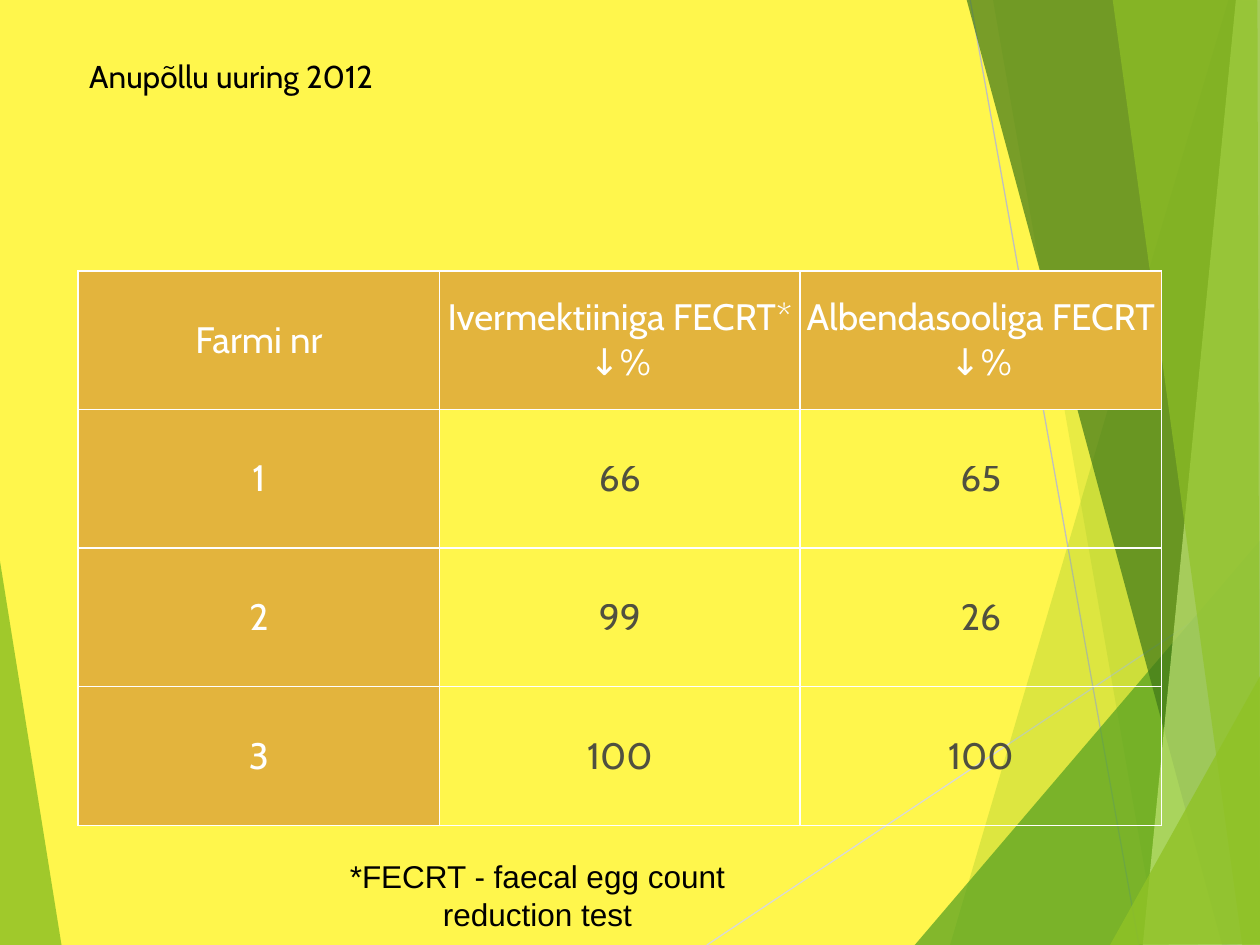
from dataclasses import dataclass
from lxml import etree
from pptx import Presentation
from pptx.dml.color import RGBColor
from pptx.enum.shapes import MSO_CONNECTOR
from pptx.enum.text import MSO_ANCHOR, PP_ALIGN
from pptx.oxml.ns import qn
from pptx.util import Inches, Pt

LINE = MSO_CONNECTOR.STRAIGHT
TOP, MIDDLE = MSO_ANCHOR.TOP, MSO_ANCHOR.MIDDLE
LEFT, CENTER = PP_ALIGN.LEFT, PP_ALIGN.CENTER
YELLOW = RGBColor(0xFF, 0xF6, 0x4C)
LIME = RGBColor(0x90, 0xC2, 0x26)
GREEN = RGBColor(0x54, 0xA0, 0x21)
DARK = RGBColor(0x3F, 0x78, 0x19)
PALE = RGBColor(0xC0, 0xE4, 0x74)
GOLD = RGBColor(0xE3, 0xB4, 0x3D)
INK = RGBColor(0x3D, 0x3E, 0x3F)
BLACK = RGBColor(0, 0, 0)
WHITE = RGBColor(0xFF, 0xFF, 0xFF)
SILVER = RGBColor(0xD9, 0xD9, 0xD9)
GRAY = RGBColor(0xBF, 0xBF, 0xBF)

SHARDS = [
    ([(9.75, 0), (7.54, 7.5), (10.02, 7.51), (10.01, 0.01)], LIME, 30),
    ([(7.88, -0.01), (9.19, 7.5), (10.01, 7.5), (10.01, -0.01)], LIME, 20),
    ([(7.26, 7.5), (10, 4.29), (10.01, 7.5)], GREEN, 72),
    ([(7.67, -0.01), (9.7, 7.5), (10.01, 7.49), (10.01, -0.01)], DARK, 70),
    ([(9.81, -0.01), (9.07, 7.5), (10.01, 7.5), (10, -0.01)], PALE, 70),
    ([(8.83, -0.01), (9.86, 7.5), (10, 7.5), (9.98, -0.01)], LIME, 65),
    ([(8.81, 7.5), (10.01, 5.35), (10.01, 7.49)], LIME, 80),
]
ROWS = [
    ("Farmi nr", "Ivermektiiniga FECRT* ↓%", "Albendasooliga FECRT ↓%"),
    ("1", "66", "65"),
    ("2", "99", "26"),
    ("3", "100", "100"),
]


def fade(node, alpha):
    for color in node.iter(qn("a:srgbClr")):
        etree.SubElement(color, qn("a:alpha")).set("val", str(alpha * 1000))


@dataclass
class Deck:
    """Draws styled elements on the current slide."""
    slide: object
    font: str = "Cabin"
    pad: float = 0.04

    def shard(self, points, color, alpha):
        spots = [(Inches(x), Inches(y)) for x, y in points]
        form = self.slide.shapes.build_freeform(*spots[0], scale=1.0)
        form.add_line_segments(spots[1:], close=True)
        shape = form.convert_to_shape()
        shape.shadow.inherit = False
        shape.fill.solid()
        shape.fill.fore_color.rgb = color
        shape.line.fill.background()
        fade(shape._element.spPr, alpha)

    def line(self, start, end, color):
        ends = [Inches(n) for n in (*start, *end)]
        line = self.slide.shapes.add_connector(LINE, *ends)
        line.line.color.rgb = color
        line.line.width = Pt(0.75)
        etree.SubElement(line._element.spPr, qn("a:effectLst"))

    def run(self, frame, text, size, color, align, font=None):
        para = frame.paragraphs[0]
        para.alignment = align
        run = para.add_run()
        run.text = text
        run.font.size = Pt(size)
        run.font.name = font or self.font
        run.font.color.rgb = color
        return run

    def text(self, box, text, align, anchor, pads, font=None):
        frame = self.slide.shapes.add_textbox(*map(Inches, box)).text_frame
        frame.word_wrap = True
        frame.vertical_anchor = anchor
        (frame.margin_left, frame.margin_top,
         frame.margin_right, frame.margin_bottom) = map(Inches, pads)
        self.run(frame, text, 18, BLACK, align, font)

    def cell(self, cell, text, head):
        cell.vertical_anchor = MIDDLE
        cell.margin_left = cell.margin_right = Inches(self.pad)
        cell.margin_top = cell.margin_bottom = Inches(self.pad)
        props = cell._tc.get_or_add_tcPr()
        for side in ("lnL", "lnR", "lnT", "lnB"):
            edge = etree.SubElement(props, qn(f"a:{side}"), w=str(Pt(1)))
            fill = etree.SubElement(edge, qn("a:solidFill"))
            etree.SubElement(fill, qn("a:srgbClr"), val=str(WHITE))
        if head:
            cell.fill.solid()
            cell.fill.fore_color.rgb = GOLD
        else:
            cell.fill.background()
        run = self.run(cell.text_frame, text, 21, WHITE if head else INK, CENTER)
        if not head:
            fade(run._r, 90)

    def table(self, box, rows, widths):
        frame = self.slide.shapes.add_table(len(rows), len(widths), *map(Inches, box))
        table = frame.table
        table.first_row = table.horz_banding = False
        for col, width in zip(table.columns, widths):
            col.width = Inches(width)
        for r, row in enumerate(rows):
            for c, text in enumerate(row):
                self.cell(table.cell(r, c), text, r == 0 or c == 0)


def main():
    show = Presentation()
    show.slide_width, show.slide_height = Inches(10), Inches(7.5)
    slide = show.slides.add_slide(show.slide_layouts[6])
    slide.background.fill.solid()
    slide.background.fill.fore_color.rgb = YELLOW
    deck = Deck(slide)
    deck.shard([(-0.01, 4.39), (0.49, 7.51), (-0.01, 7.5)], LIME, 85)
    deck.line((5.61, 7.5), (10.01, 4.57), SILVER)
    deck.line((7.7, 0), (9.04, 7.5), GRAY)
    for shard in SHARDS:
        deck.shard(*shard)
    deck.text((0.61, 0.4, 8.79, 1.46), "Anupõllu uuring 2012",
              LEFT, TOP, (0.1, 0.05, 0.1, 0.05))
    deck.table((0.62, 2.15, 8.6, 4.4), ROWS, (2.87, 2.86, 2.87))
    deck.text((2.19, 6.92, 4.41, 0.37), "*FECRT - faecal egg count reduction test",
              CENTER, MIDDLE, (0.04, 0.04, 0.3, 0.04), "Arial")
    show.save("out.pptx")


if __name__ == "__main__":
    main()
